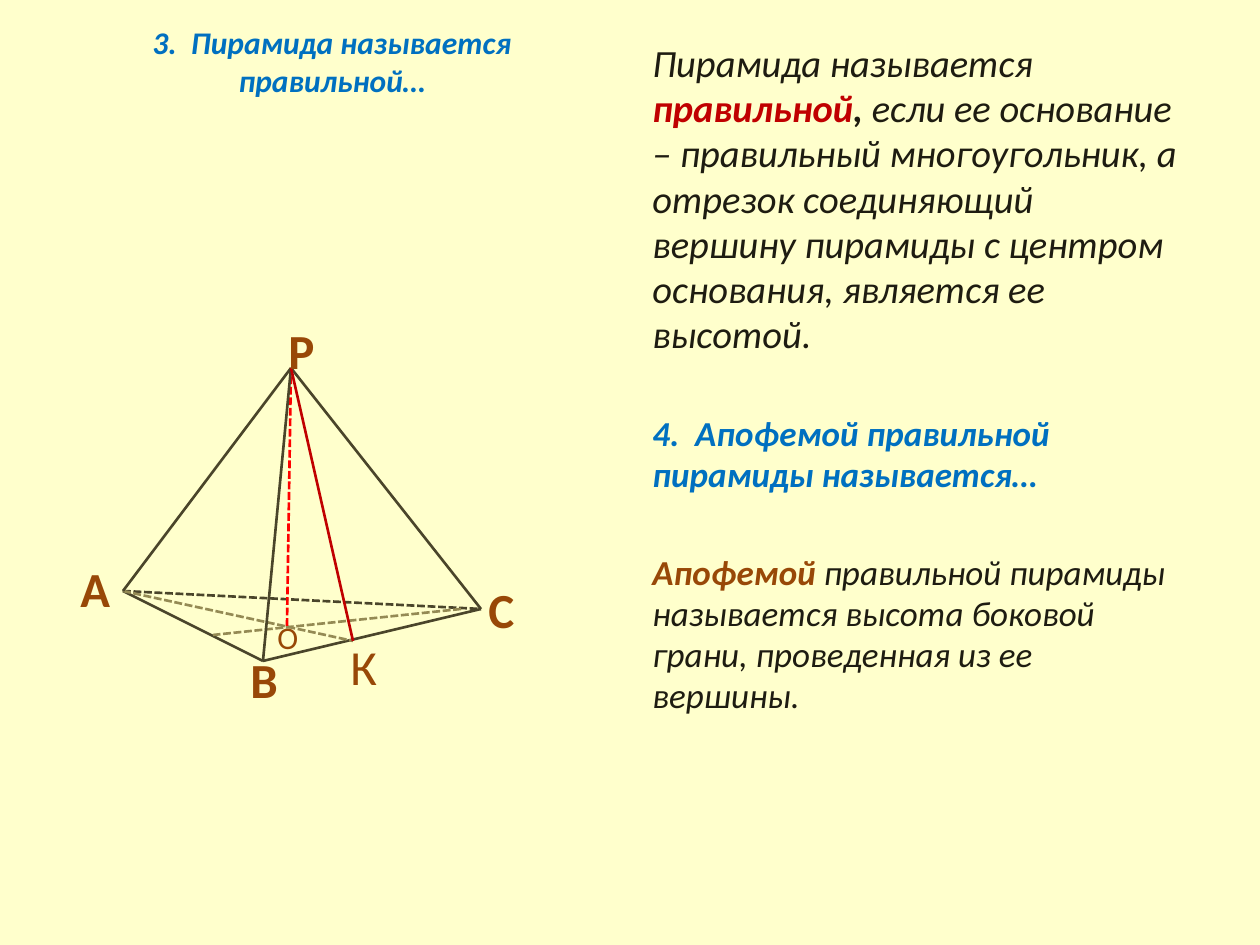
import pptx
import pptx.util
import pptx.dml.color
import pptx.enum.dml
import pptx.enum.shapes
import pptx.enum.text
import pptx.oxml
from dataclasses import dataclass

SCALE = 914400 / 126


@dataclass(frozen=True)
class Theme:
    """Colours and type sizes of the slide."""
    font: str = "Calibri"
    back: str = "FFFFCC"
    blue: str = "0070C0"
    dark: str = "1E1C11"
    red: str = "C00000"
    brown: str = "984807"
    edge: str = "4A452A"
    base: str = "948A54"
    axis: str = "FF0000"
    small: int = 18
    text: int = 20
    lead: int = 22
    label: int = 28


THEME = Theme()


def px(num):
    """Turn pixels into EMU."""
    return pptx.util.Emu(round(num * SCALE))


def rgb(code):
    """Turn a hex code into a colour."""
    return pptx.dml.color.RGBColor.from_string(code)


def style(font, size=None, color=None, bold=None, slant=None):
    """Set the given font traits."""
    font.name = THEME.font
    if size:
        font.size = pptx.util.Pt(size)
    if color:
        font.color.rgb = rgb(color)
    if bold is not None:
        font.bold = bold
    if slant is not None:
        font.italic = slant


def add_box(slide, left, top, width, height, wrap=True):
    """Add a text box and return its frame."""
    frame = slide.shapes.add_textbox(px(left), px(top), px(width), px(height)).text_frame
    frame.word_wrap = wrap
    return frame


def add_title(slide, left, top, width, height):
    """Place the centred heading."""
    frame = add_box(slide, left, top, width, height)
    frame.margin_top = px(7)
    para = frame.paragraphs[0]
    para.text = "3.\u00a0 Пирамида называется правильной…".replace("\u00a0", " ")
    para.alignment = pptx.enum.text.PP_ALIGN.CENTER
    style(para.font, THEME.small, THEME.blue, True, True)


def add_body(slide, left, top, width, height):
    """Place the definitions."""
    frame = add_box(slide, left, top, width, height)
    items = [
        (THEME.lead, [
            ("Пирамида называется ", THEME.dark, False),
            ("правильной", THEME.red, True),
            (", ", THEME.dark, True),
            ("если ее основание – правильный многоугольник, а отрезок соединяющий "
             "вершину пирамиды с центром основания, является ее высотой.", THEME.dark, False)]),
        (THEME.text, [("4.  Апофемой правильной пирамиды называется…", THEME.blue, True)]),
        (THEME.text, [
            ("Апофемой ", THEME.brown, True),
            ("правильной пирамиды называется высота боковой грани, "
             "проведенная из ее вершины.", THEME.dark, False)]),
    ]
    for pos, (size, runs) in enumerate(items):
        para = frame.add_paragraph() if pos else frame.paragraphs[0]
        para.line_spacing = 0.98
        if pos:
            para.space_before = pptx.util.Pt(32)
        style(para.font, size, slant=True)
        for text, color, bold in runs:
            run = para.add_run()
            run.text = text
            style(run.font, color=color, bold=bold)


def add_line(slide, start, end, color, dash):
    """Draw one segment."""
    line = slide.shapes.add_connector(
        pptx.enum.shapes.MSO_CONNECTOR.STRAIGHT, *map(px, start + end))
    line.line.color.rgb = rgb(color)
    line.line.width = pptx.util.Pt(1.5)
    if dash:
        line.line.dash_style = pptx.enum.dml.MSO_LINE.SQUARE_DOT
    props = line._element.spPr
    props.append(pptx.oxml.parse_xml(
        '<a:effectLst xmlns:a="http://schemas.openxmlformats.org/drawingml/2006/main"/>'))


def add_solid(slide, left, top):
    """Draw the pyramid with its height, slant height and labels."""
    spots = {"A": (55, 277), "B": (195, 347), "C": (413, 295), "P": (223, 54),
             "K": (285, 327), "O": (219, 312), "M": (145, 321), "N": (393, 295)}
    spots = {key: (left + x, top + y) for key, (x, y) in spots.items()}
    lines = [("AB", THEME.edge, False), ("BC", THEME.edge, False),
             ("AC", THEME.edge, True), ("NM", THEME.base, True),
             ("AK", THEME.base, True), ("OP", THEME.axis, True),
             ("PA", THEME.edge, False), ("PC", THEME.edge, False),
             ("PB", THEME.edge, False), ("PK", THEME.red, False)]
    for ends, color, dash in lines:
        add_line(slide, spots[ends[0]], spots[ends[1]], color, dash)
    labels = [("Р", 208, 0, 52, 72, THEME.label, True),
              ("А", 0, 238, 55, 72, THEME.label, True),
              ("В", 170, 329, 53, 72, THEME.label, True),
              ("С", 408, 259, 52, 72, THEME.label, True),
              ("К", 270, 316, 52, 72, THEME.label, False),
              ("О", 197, 298, 47, 50, THEME.small, False)]
    for text, x, y, width, height, size, bold in labels:
        frame = add_box(slide, left + x, top + y, width, height, False)
        frame.auto_size = pptx.enum.text.MSO_AUTO_SIZE.SHAPE_TO_FIT_TEXT
        para = frame.paragraphs[0]
        para.text = text
        style(para.font, size, THEME.brown, bold)


def main():
    """Build and save the slide."""
    deck = pptx.Presentation()
    deck.slide_width, deck.slide_height = px(1260), px(945)
    slide = deck.slides.add_slide(deck.slide_layouts[6])
    fill = slide.background.fill
    fill.solid()
    fill.fore_color.rgb = rgb(THEME.back)
    add_title(slide, 84, 16, 496, 129)
    add_body(slide, 640, 35, 557, 808)
    add_solid(slide, 68, 314)
    deck.save("out.pptx")


if __name__ == "__main__":
    main()
